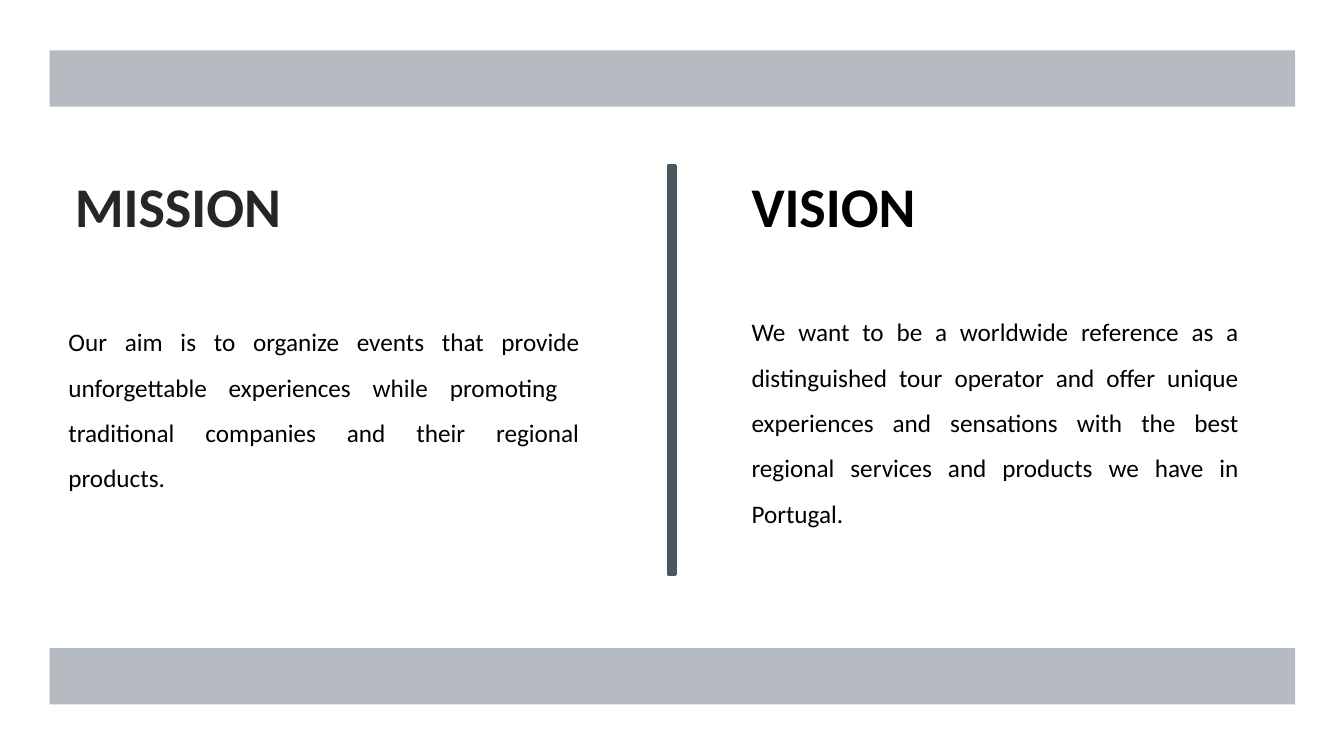
from lxml import etree
from pptx import Presentation
from pptx.dml.color import RGBColor
from pptx.enum.shapes import MSO_SHAPE
from pptx.enum.text import MSO_ANCHOR, MSO_AUTO_SIZE, PP_ALIGN
from pptx.oxml.ns import qn
from pptx.util import Cm, Pt

RECT = MSO_SHAPE.RECTANGLE
TOP = MSO_ANCHOR.TOP
NO_FIT = MSO_AUTO_SIZE.NONE
LEFT, JUSTIFY = PP_ALIGN.LEFT, PP_ALIGN.JUSTIFY

WHITE = RGBColor(0xFF, 0xFF, 0xFF)
BLACK = RGBColor(0x00, 0x00, 0x00)
CHARCOAL = RGBColor(0x26, 0x26, 0x26)
BAND_GREY = RGBColor(0x96, 0x9F, 0xA7)
SLATE = RGBColor(0x4B, 0x57, 0x5D)

HEADING = dict(size=40, bold=True)
STATEMENT = dict(size=18, align=JUSTIFY, spacing=1.5)

MISSION = ("Our aim is to organize events that provide unforgettable experiences "
           "while promoting  traditional companies and their regional products.")
VISION = ("We want to be a worldwide reference as a distinguished tour operator "
          "and offer unique experiences and sensations with the best regional "
          "services and products we have in Portugal.")


def write(tf, text, size=18, color=BLACK, bold=False, align=LEFT,
          spacing=1.0, after=0, font="Calibri"):
    """Fill a text frame with one formatted, unbulleted paragraph."""
    tf.word_wrap = True
    tf.auto_size = NO_FIT
    tf.vertical_anchor = TOP
    p = tf.paragraphs[0]
    p.alignment = align
    p.line_spacing = spacing
    p.space_before, p.space_after = Pt(0), Pt(after)
    pPr = p._p.get_or_add_pPr()
    pPr.set("marL", "0")
    pPr.set("indent", "0")
    etree.SubElement(pPr, qn("a:buNone"))
    r = p.add_run()
    r.text = text
    r.font.name, r.font.size, r.font.bold = font, Pt(size), bold
    r.font.color.rgb = color


class SlideBuilder:
    """Holds the current slide and adds its elements; lengths are in cm."""

    def __init__(self, prs, layout):
        self.s = prs.slides.add_slide(layout)
        self.s.background.fill.solid()
        self.s.background.fill.fore_color.rgb = WHITE

    def placeholder(self, idx, box, text, **fmt):
        sp = self.s.placeholders[idx]
        sp.left, sp.top, sp.width, sp.height = map(Cm, box)
        write(sp.text_frame, text, **fmt)

    def text(self, box, text, **fmt):
        sp = self.s.shapes.add_textbox(*map(Cm, box))
        write(sp.text_frame, text, **fmt)

    def bar(self, box, color, opacity=None, line=None):
        sp = self.s.shapes.add_shape(RECT, *map(Cm, box))
        sp.shadow.inherit = False
        sp.fill.solid()
        sp.fill.fore_color.rgb = color
        if opacity is not None:
            clr = sp._element.spPr.find(".//" + qn("a:srgbClr"))
            etree.SubElement(clr, qn("a:alpha"), val=str(opacity * 1000))
        if line is None:
            sp.line.fill.background()
        else:
            sp.line.color.rgb = color
            sp.line.width = Pt(line)


def main():
    prs = Presentation()
    prs.slide_width, prs.slide_height = Cm(33.87), Cm(19.05)
    slide = SlideBuilder(prs, prs.slide_layouts[1])

    # Top and bottom bands
    for top in (1.27, 16.33):
        slide.bar((1.25, top, 31.39, 1.42), BAND_GREY, opacity=70)

    # Mission, left column
    slide.placeholder(0, (1.63, 4.19, 14.22, 10.85), "MISSION",
                      color=CHARCOAL, **HEADING)
    slide.placeholder(1, (1.47, 7.72, 13.39, 6.65), MISSION, after=6, **STATEMENT)

    # Divider
    slide.bar((16.84, 4.17, 0.18, 10.31), SLATE, line=1.75)

    # Vision, right column
    slide.text((18.69, 4.19, 7.62, 1.96), "VISION", **HEADING)
    slide.text((18.69, 7.47, 12.78, 5.92), VISION, **STATEMENT)

    prs.save("out.pptx")


if __name__ == "__main__":
    main()
